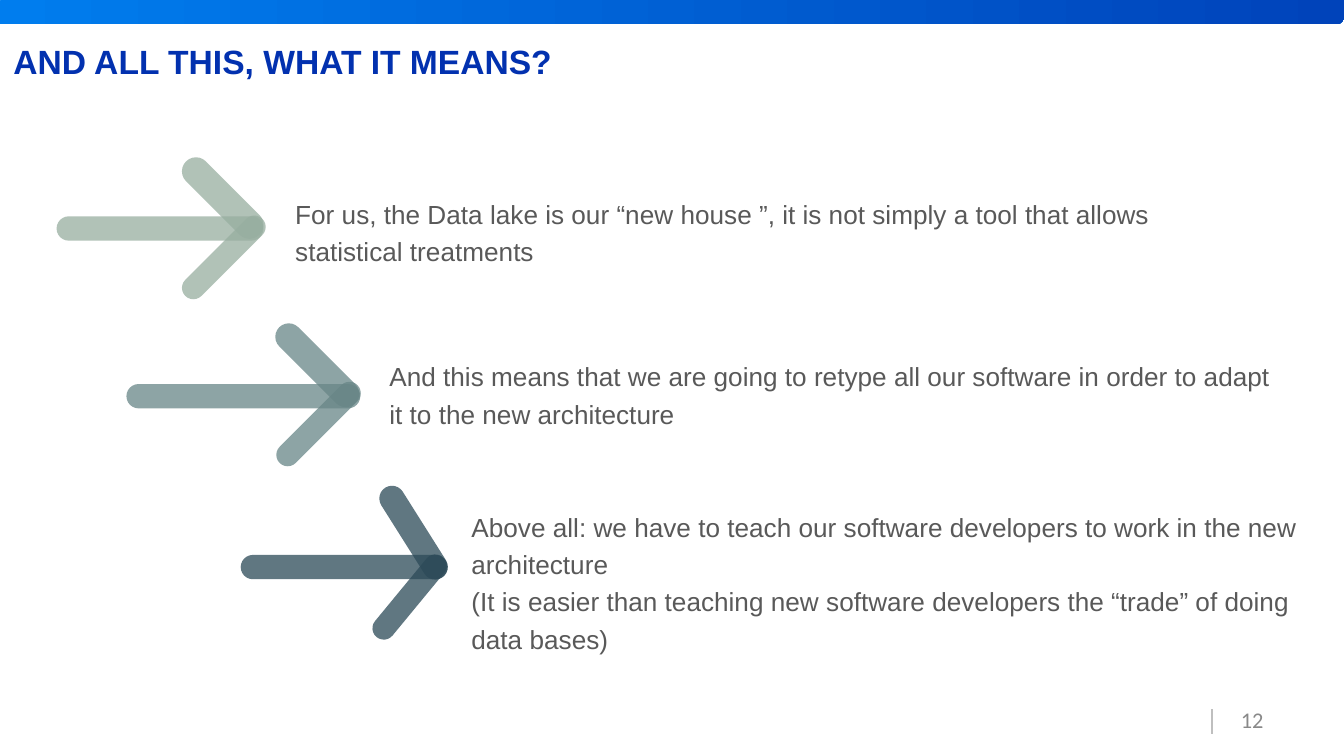
from dataclasses import dataclass

from lxml import etree
from pptx import Presentation
from pptx.dml.color import RGBColor
from pptx.enum.shapes import MSO_CONNECTOR, MSO_SHAPE
from pptx.enum.text import MSO_ANCHOR, MSO_AUTO_SIZE, PP_ALIGN
from pptx.oxml.ns import qn
from pptx.util import Cm, Pt

ROUND_RECT = MSO_SHAPE.ROUNDED_RECTANGLE
DIAGONAL_RECT = MSO_SHAPE.ROUND_2_DIAG_RECTANGLE
STRAIGHT = MSO_CONNECTOR.STRAIGHT
TOP, MIDDLE = MSO_ANCHOR.TOP, MSO_ANCHOR.MIDDLE
LEFT, RIGHT = PP_ALIGN.LEFT, PP_ALIGN.RIGHT
NO_AUTOFIT = MSO_AUTO_SIZE.NONE


@dataclass(frozen=True)
class Theme:
    bar_start: str = "007DEE"
    bar_end: str = "0043BA"
    title: str = "0231AF"
    body: str = "595959"
    page: str = "898989"
    divider: str = "BFBFBF"
    arrows: tuple = ("97AEA0", "688687", "2C4A58")
    arrow_opacity: int = 75
    title_size: int = 18
    body_size: int = 14
    page_size: int = 12
    line_spacing: int = 20


theme = Theme()


def write_text(shape, *paragraphs, size, color, font="Arial", bold=False,
               align=LEFT, anchor=TOP, spacing=None):
    frame = shape.text_frame
    frame.word_wrap = True
    frame.auto_size = NO_AUTOFIT
    frame.vertical_anchor = anchor
    frame.text = "\n".join(paragraphs)
    for paragraph in frame.paragraphs:
        paragraph.alignment = align
        if spacing:
            paragraph.line_spacing = Pt(spacing)
        for run in paragraph.runs:
            run.font.name = font
            run.font.size = Pt(size)
            run.font.bold = bold
            run.font.color.rgb = RGBColor.from_string(color)


def add_arrow_stroke(slide, box, angle, color):
    """Add one translucent round-ended stroke of an arrow."""
    stroke = slide.shapes.add_shape(ROUND_RECT, *map(Cm, box))
    stroke.adjustments[0] = 0.5
    stroke.rotation = angle
    stroke.shadow.inherit = False
    stroke.line.fill.background()
    stroke.fill.solid()
    stroke.fill.fore_color.rgb = RGBColor.from_string(color)
    rgb = stroke.fill._xPr.find(".//" + qn("a:srgbClr"))
    etree.SubElement(rgb, qn("a:alpha"), val=str(theme.arrow_opacity * 1000))


prs = Presentation()
prs.slide_width, prs.slide_height = Cm(25.4), Cm(14.29)
slide = prs.slides.add_slide(prs.slide_layouts[5])

# Top bar
top_bar = slide.shapes.add_shape(DIAGONAL_RECT, Cm(-0.03), Cm(-0.05), Cm(25.43), Cm(0.51))
top_bar.adjustments[0] = 0.29
top_bar.adjustments[1] = 0
top_bar.shadow.inherit = False
top_bar.line.fill.background()
top_bar.fill.gradient()
top_bar.fill.gradient_angle = 0
for stop, position, color in zip(top_bar.fill.gradient_stops, (0, 1),
                                 (theme.bar_start, theme.bar_end)):
    stop.position = position
    stop.color.rgb = RGBColor.from_string(color)

# Page number and its divider
divider = slide.shapes.add_connector(STRAIGHT, Cm(22.91), Cm(13.41), Cm(22.91), Cm(13.87))
divider.line.color.rgb = RGBColor.from_string(theme.divider)
divider.line.width = Pt(1)
etree.SubElement(divider._element.spPr, qn("a:effectLst"))
page_number = slide.shapes.add_textbox(Cm(22.56), Cm(13.23), Cm(1.57), Cm(0.76))
write_text(page_number, "12", size=theme.page_size, color=theme.page,
           font="Calibri", align=RIGHT, anchor=MIDDLE)

# Title
title = slide.shapes.title
title.left, title.top, title.width, title.height = Cm(0), Cm(0.56), Cm(22.86), Cm(1.17)
write_text(title, "AND ALL THIS, WHAT IT MEANS?", size=theme.title_size,
           color=theme.title, bold=True, anchor=MIDDLE)

# Each message: arrow strokes as (left, top, width, height) and angle, text box, text
messages = [
    ([((3.23, 3.48, 1.96, 0.53), 45),
      ((3.2, 4.65, 2.06, 0.43), 135),
      ((1.07, 4.09, 3.91, 0.46), 0)],
     (5.33, 3.51, 17.7, 1.63),
     ["For us, the Data lake is our “new house ”, it is not simply a tool "
      "that allows statistical treatments"]),
    ([((4.98, 6.65, 2.03, 0.51), 45),
      ((4.98, 7.8, 2.08, 0.43), 135),
      ((2.39, 7.26, 4.42, 0.46), 0)],
     (7.11, 6.58, 17.25, 1.63),
     ["And this means that we are going to retype all our software in order "
      "to adapt it to the new architecture"]),
    ([((6.81, 9.83, 2.01, 0.48), 57.8),
      ((6.76, 11.07, 1.96, 0.43), 129.5),
      ((4.55, 10.49, 3.91, 0.46), 0)],
     (8.66, 9.42, 16.18, 3.05),
     ["Above all: we have to teach our software developers to work in the "
      "new architecture",
      "(It is easier than teaching new software developers the “trade” of "
      "doing data bases)"]),
]
for (strokes, text_area, paragraphs), color in zip(messages, theme.arrows):
    for box, angle in strokes:
        add_arrow_stroke(slide, box, angle, color)
    message = slide.shapes.add_textbox(*map(Cm, text_area))
    write_text(message, *paragraphs, size=theme.body_size, color=theme.body,
               spacing=theme.line_spacing)

prs.save("out.pptx")
